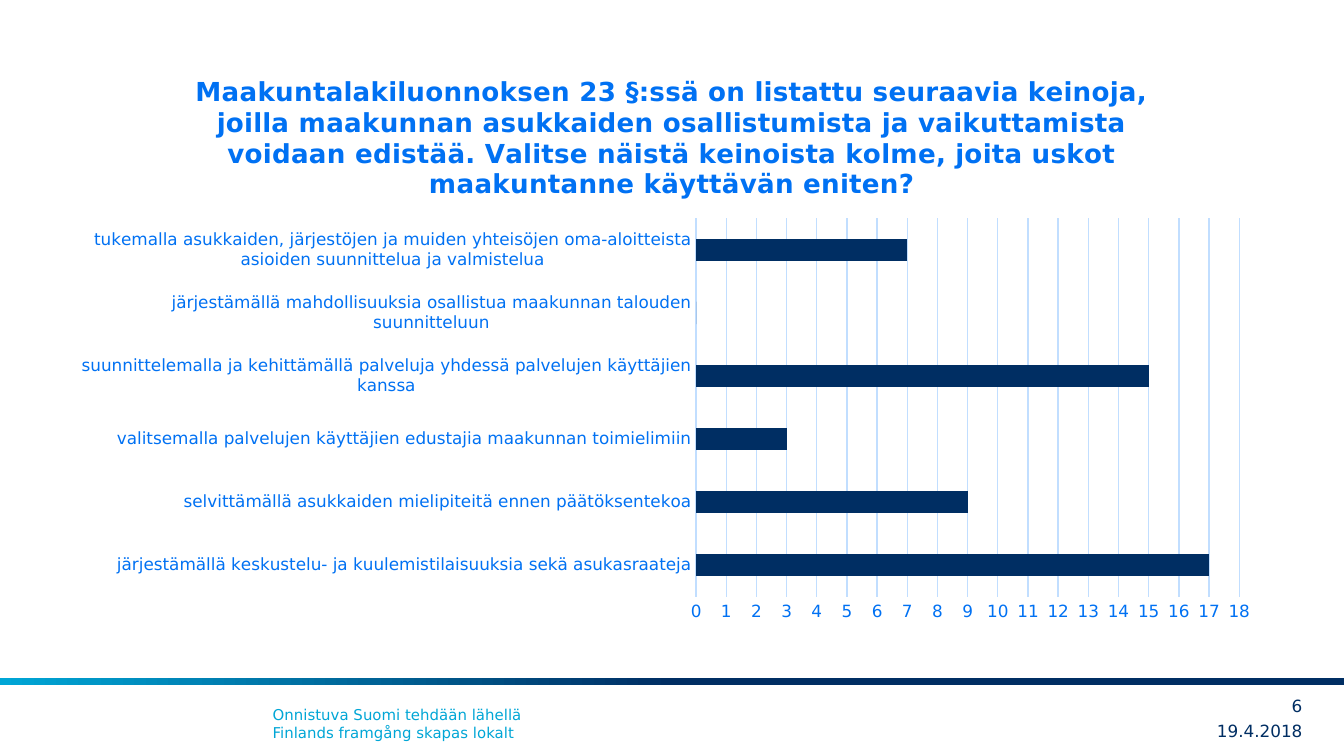
"""Build a survey slide with a bar chart, a gradient rule and a footer."""
from lxml.etree import SubElement
from pptx import Presentation
from pptx.chart.data import CategoryChartData
from pptx.dml.color import RGBColor
from pptx.enum.chart import XL_CHART_TYPE, XL_TICK_MARK
from pptx.enum.shapes import MSO_SHAPE
from pptx.enum.text import MSO_ANCHOR, PP_ALIGN
from pptx.oxml.ns import qn
from pptx.util import Pt

TITLE = (
    "Maakuntalakiluonnoksen 23 §:ssä on listattu seuraavia keinoja, "
    "joilla maakunnan asukkaiden osallistumista ja vaikuttamista "
    "voidaan edistää. Valitse näistä keinoista kolme, joita uskot "
    "maakuntanne käyttävän eniten?"
)
ANSWERS = [
    ("järjestämällä keskustelu- ja kuulemistilaisuuksia sekä asukasraateja", 17),
    ("selvittämällä asukkaiden mielipiteitä ennen päätöksentekoa", 9),
    ("valitsemalla palvelujen käyttäjien edustajia maakunnan toimielimiin", 3),
    ("suunnittelemalla ja kehittämällä palveluja yhdessä palvelujen käyttäjien kanssa", 15),
    ("järjestämällä mahdollisuuksia osallistua maakunnan talouden suunnitteluun", 0),
    ("tukemalla asukkaiden, järjestöjen ja muiden yhteisöjen oma-aloitteista "
     "asioiden suunnittelua ja valmistelua", 7),
]


class Theme:
    font = "DejaVu Sans"
    navy = RGBColor.from_string("002E63")
    cyan = RGBColor.from_string("00A6D6")
    blue = RGBColor.from_string("0071F3")
    pale = RGBColor.from_string("C1DEFF")
    title, base, label, slogan = Pt(14), Pt(10), Pt(9), Pt(8)
    hairline = Pt(0.75)


FLUSH = dict.fromkeys(("margin_left", "margin_top", "margin_right", "margin_bottom"), 0)
CENTRED = {**FLUSH, "vertical_anchor": MSO_ANCHOR.MIDDLE}
FOOTER = [
    ("Onnistuva Suomi tehdään lähellä\vFinlands framgång skapas lokalt",
     (139, 374.4, 471, 26.6), Theme.slogan, Theme.cyan, PP_ALIGN.LEFT, {}),
    ("19.4.2018", (626.4, 383.8, 71.3, 15.8), Theme.label, Theme.navy, PP_ALIGN.RIGHT, CENTRED),
    ("6", (666.7, 370, 31, 15.8), Theme.label, Theme.navy, PP_ALIGN.RIGHT, CENTRED),
]
CHART_FRAME = (36.7, 26.6, 646.6, 311.8)
PLOT_LAYOUT = {"layoutTarget": "inner", "xMode": "edge", "yMode": "edge",
               "x": 0.52, "y": 0.29, "w": 0.45, "h": 0.65}


def apply(target, values):
    for name, value in values.items():
        setattr(target, name, value)


def style_font(font, size, color, bold=False):
    apply(font, {"name": Theme.font, "size": size, "bold": bold})
    font.color.rgb = color


def style_line(line):
    line.color.rgb = Theme.pale
    line.width = Theme.hairline


def place(frame):
    return [Pt(length) for length in frame]


def add_rule(page):
    rule = page.shapes.add_shape(MSO_SHAPE.RECTANGLE, *place((0, 363.4, 720, 3.6)))
    rule.shadow.inherit = False
    rule.line.fill.background()
    rule.fill.gradient()
    rule.fill.gradient_angle = 180
    for stop, position, color in zip(rule.fill.gradient_stops, (0.5, 1), (Theme.navy, Theme.cyan)):
        stop.position = position
        stop.color.rgb = color


def add_label(page, text, frame, size, color, alignment, format_values):
    box = page.shapes.add_textbox(*place(frame))
    apply(box.text_frame, {"word_wrap": True, **format_values})
    para = box.text_frame.paragraphs[0]
    para.text = text
    para.alignment = alignment
    for span in para.runs:
        style_font(span.font, size, color)


def add_answer_chart(page):
    data = CategoryChartData(number_format="0")
    data.categories = [answer for answer, count in ANSWERS]
    data.add_series("Series 1", [count for answer, count in ANSWERS])
    chart = page.shapes.add_chart(XL_CHART_TYPE.BAR_CLUSTERED, *place(CHART_FRAME), data).chart
    style_font(chart.font, Theme.base, Theme.navy)
    chart.has_legend = False
    chart.has_title = True
    heading = chart.chart_title.text_frame.paragraphs[0]
    heading.text = TITLE
    style_font(heading.runs[0].font, Theme.title, Theme.blue, bold=True)

    plot = chart.plots[0]
    apply(plot, {"gap_width": 182, "vary_by_categories": False})
    bars = plot.series[0].format.fill
    bars.solid()
    bars.fore_color.rgb = Theme.navy

    for axis in (chart.category_axis, chart.value_axis):
        apply(axis, {"major_tick_mark": XL_TICK_MARK.NONE, "minor_tick_mark": XL_TICK_MARK.NONE})
        style_font(axis.tick_labels.font, Theme.label, Theme.blue)
    style_line(chart.category_axis.format.line)
    values = chart.value_axis
    apply(values, {"minimum_scale": 0, "maximum_scale": 18, "major_unit": 1,
                   "has_major_gridlines": True})
    values.format.line.fill.background()
    style_line(values.major_gridlines.format.line)
    apply(values.tick_labels, {"number_format": "0", "number_format_is_linked": False})
    set_plot_layout(chart)


def set_plot_layout(chart):
    area = chart.element.find(".//" + qn("c:plotArea"))
    layout = area.find(qn("c:layout"))
    if layout is None:
        layout = SubElement(area, qn("c:layout"))
        area.insert(0, layout)
    manual = SubElement(layout, qn("c:manualLayout"))
    for name, value in PLOT_LAYOUT.items():
        SubElement(manual, qn(f"c:{name}")).set("val", str(value))


def main():
    deck = Presentation()
    apply(deck, {"slide_width": Pt(720), "slide_height": Pt(405)})
    page = deck.slides.add_slide(deck.slide_layouts[6])
    add_rule(page)
    for label in FOOTER:
        add_label(page, *label)
    add_answer_chart(page)
    deck.save("out.pptx")


if __name__ == "__main__":
    main()
